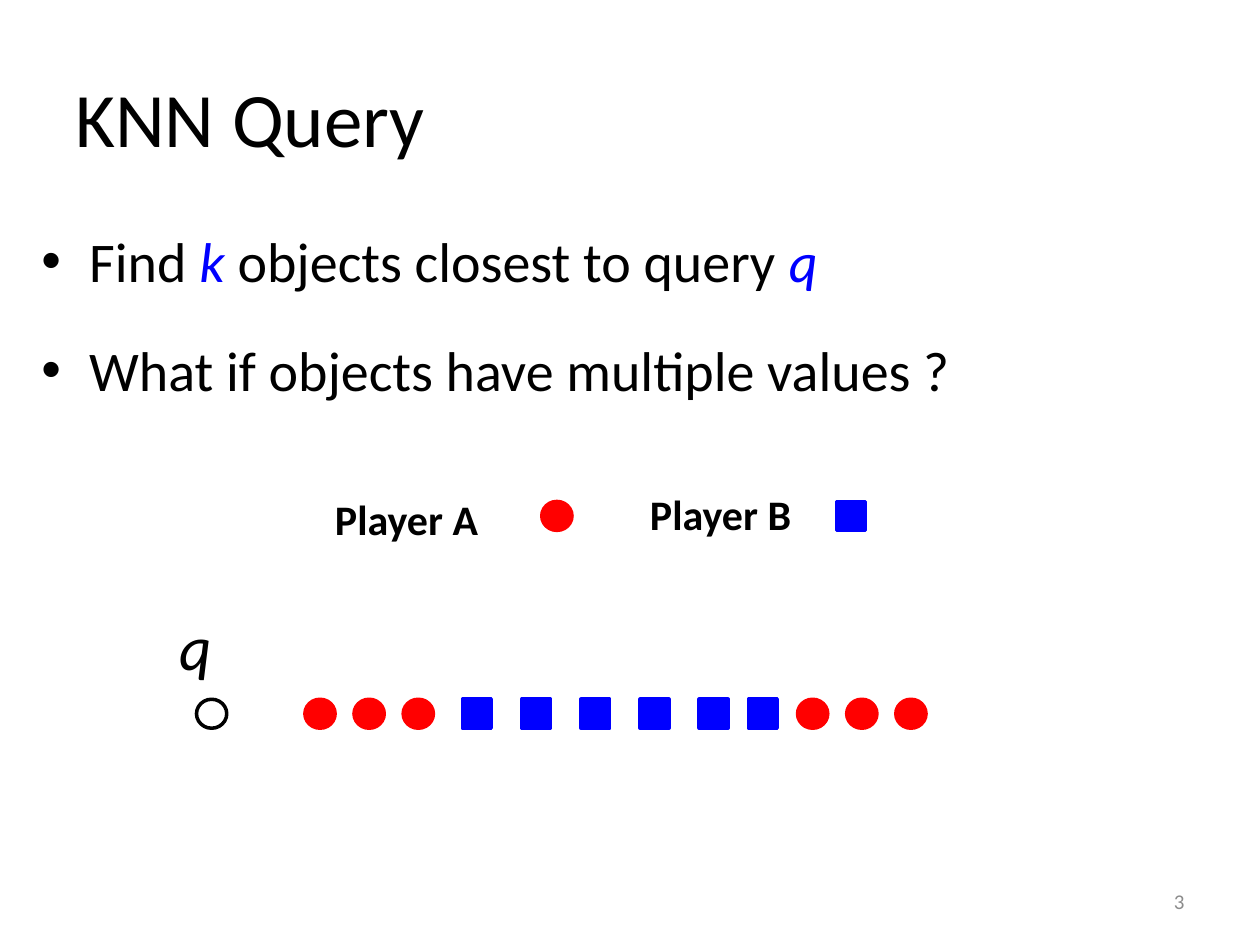
from dataclasses import dataclass

from lxml import etree
from pptx import Presentation
from pptx.dml.color import RGBColor
from pptx.enum.shapes import MSO_SHAPE
from pptx.enum.text import MSO_ANCHOR, PP_ALIGN
from pptx.oxml.ns import qn
from pptx.util import Inches, Pt

CIRCLE, SQUARE = MSO_SHAPE.OVAL, MSO_SHAPE.RECTANGLE
MIDDLE, TOP = MSO_ANCHOR.MIDDLE, MSO_ANCHOR.TOP
LEFT, RIGHT = PP_ALIGN.LEFT, PP_ALIGN.RIGHT


@dataclass(frozen=True)
class Theme:
    font: str = "Calibri"
    black: str = "000000"
    white: str = "FFFFFF"
    red: str = "FF0000"
    blue: str = "0000FF"
    gray: str = "8C8C8C"
    title: int = 44
    query: int = 36
    body: int = 32
    legend: int = 24
    number: int = 12
    outline: int = 2


THEME = Theme()

TITLE = "KNN Query"
SLIDE_NUMBER = "3"
QUERY_LABEL = "q"

# Each bullet: top, then pieces of text; the variables are emphasised
VARIABLES = ("k", "q")
BULLETS = [
    (1.75, ["Find ", "k", " objects closest to query ", "q"]),
    (2.61, ["What if objects have multiple values ?"]),
]

# Kind of object: shape, width, fill, outline
MARKERS = {
    "A": (CIRCLE, 0.24, THEME.red, THEME.red),
    "B": (SQUARE, 0.23, THEME.blue, THEME.blue),
    "query": (CIRCLE, 0.24, THEME.white, THEME.black),
}
MARKER_HEIGHT = 0.23

# Label, label left and top, player, marker left
LEGEND = [("Player A", 2.56, 3.87, "A", 4.3), ("Player B", 5.06, 3.83, "B", 6.64)]
LEGEND_TOP = 3.98

# Runs of values along the line: player, first left, pitch, count
VALUES_TOP = 5.55
VALUE_RUNS = [
    ("query", 1.56, 0, 1),
    ("A", 2.42, 0.39, 3),
    ("B", 3.67, 0.47, 5),
    ("B", 5.94, 0, 1),
    ("A", 6.33, 0.39, 3),
]


def add_text(slide, box, pieces, size, color=THEME.black, bold=False, italic=False,
             anchor=TOP, align=LEFT, wrap=True):
    """Add one paragraph made of the given pieces and return it."""
    frame = slide.shapes.add_textbox(*map(Inches, box)).text_frame
    frame.word_wrap = wrap
    frame.vertical_anchor = anchor
    paragraph = frame.paragraphs[0]
    paragraph.alignment = align
    for piece in pieces:
        run = paragraph.add_run()
        run.text = piece
        font = run.font
        font.name, font.size = THEME.font, Pt(size)
        font.bold, font.italic = bold, italic
        font.color.rgb = RGBColor.from_string(color)
    return paragraph


def add_bullet(slide, top, pieces):
    paragraph = add_text(slide, (0.23, top, 9, 0.91), pieces, THEME.body)
    properties = paragraph._p.get_or_add_pPr()
    properties.set("marL", str(Inches(0.38)))
    properties.set("indent", str(-Inches(0.38)))
    spacing = etree.SubElement(properties, qn("a:spcBef"))
    etree.SubElement(spacing, qn("a:spcPct")).set("val", "20000")
    etree.SubElement(properties, qn("a:buFont")).set("typeface", "Arial")
    etree.SubElement(properties, qn("a:buChar")).set("char", "•")
    for run in paragraph.runs:
        if run.text in VARIABLES:
            run.font.italic = True
            run.font.color.rgb = RGBColor.from_string(THEME.blue)


def add_marker(slide, kind, left, top):
    outline_shape, width, fill, line = MARKERS[kind]
    marker = slide.shapes.add_shape(
        outline_shape, *map(Inches, (left, top, width, MARKER_HEIGHT)))
    marker.shadow.inherit = False
    marker.fill.solid()
    marker.fill.fore_color.rgb = RGBColor.from_string(fill)
    marker.line.color.rgb = RGBColor.from_string(line)
    marker.line.width = Pt(THEME.outline)


def main():
    deck = Presentation()
    deck.slide_width, deck.slide_height = Inches(10), Inches(7.5)
    slide = deck.slides.add_slide(deck.slide_layouts[6])

    add_text(slide, (0.5, 0.3, 9, 1.25), [TITLE], THEME.title, anchor=MIDDLE)
    for top, pieces in BULLETS:
        add_bullet(slide, top, pieces)

    for label, label_left, label_top, player, marker_left in LEGEND:
        add_text(slide, (label_left, label_top, 1.35, 0.5), [label],
                 THEME.legend, bold=True, wrap=False)
        add_marker(slide, player, marker_left, LEGEND_TOP)

    add_text(slide, (1.33, 4.77, 0.46, 0.71), [QUERY_LABEL],
             THEME.query, italic=True, wrap=False)
    for kind, first_left, pitch, count in VALUE_RUNS:
        for index in range(count):
            add_marker(slide, kind, first_left + index * pitch, VALUES_TOP)

    add_text(slide, (7.17, 6.95, 2.33, 0.4), [SLIDE_NUMBER], THEME.number,
             THEME.gray, anchor=MIDDLE, align=RIGHT)
    deck.save("out.pptx")


if __name__ == "__main__":
    main()
